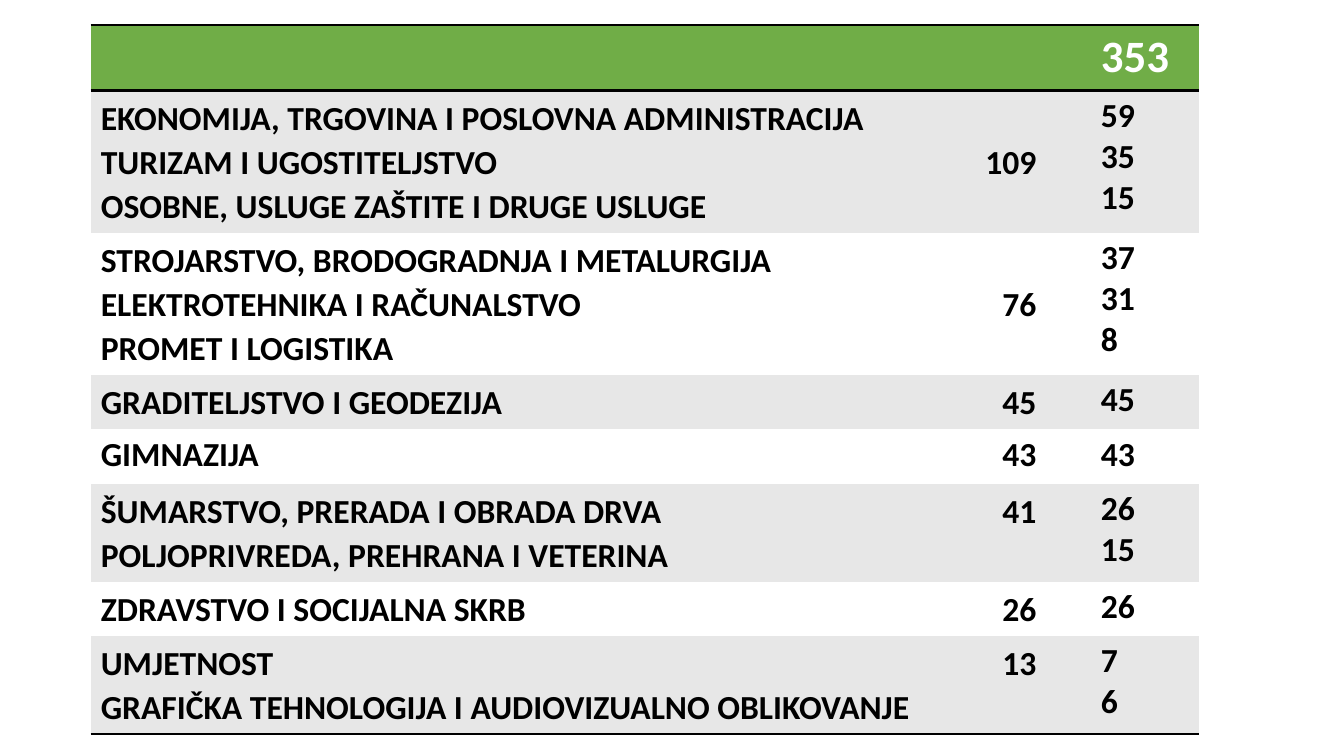
from lxml import etree
from pptx import Presentation
from pptx.dml.color import RGBColor
from pptx.oxml.ns import qn
from pptx.util import Inches, Pt

GREEN = RGBColor(0x70, 0xAD, 0x47)
GREY = RGBColor(0xE7, 0xE7, 0xE7)
WHITE = RGBColor(0xFF, 0xFF, 0xFF)
BLACK = RGBColor(0, 0, 0)
BLANK_LAYOUT = 6
FONT = "Calibri"
PLAIN_STYLE = "{2D5ABB26-0587-4C30-8999-92F81FD0307C}"
LABEL_SPACING = 1.07
SUM_TAB = Inches(9.28)
COLUMN_WIDTHS = (9.92, 1.07)
HEADER_HEIGHT = 0.65
ROW_HEIGHTS = {1: 0.54, 2: 0.97, 3: 1.41}

TOTAL = "353"
SECTORS = [
    (["EKONOMIJA, TRGOVINA I POSLOVNA ADMINISTRACIJA",
      "TURIZAM I UGOSTITELJSTVO\t109",
      "OSOBNE, USLUGE ZAŠTITE I DRUGE USLUGE"], ["59", "35", "15"]),
    (["STROJARSTVO, BRODOGRADNJA I METALURGIJA",
      "ELEKTROTEHNIKA I RAČUNALSTVO\t76",
      "PROMET I LOGISTIKA"], ["37", "31", "8"]),
    (["GRADITELJSTVO I GEODEZIJA\t45"], ["45"]),
    (["GIMNAZIJA\t43"], ["43"]),
    (["ŠUMARSTVO, PRERADA I OBRADA DRVA\t41",
      "POLJOPRIVREDA, PREHRANA I VETERINA"], ["26", "15"]),
    (["ZDRAVSTVO I SOCIJALNA SKRB\t26"], ["26"]),
    (["UMJETNOST\t13",
      "GRAFIČKA TEHNOLOGIJA I AUDIOVIZUALNO OBLIKOVANJE"], ["7", "6"]),
]


def add_sum_tab(paragraph):
    properties = paragraph._p.get_or_add_pPr()
    tabs = etree.SubElement(properties, qn("a:tabLst"))
    etree.SubElement(tabs, qn("a:tab"), pos=str(SUM_TAB), algn="r")


def fill_cell(cell, lines, background, size=24, color=BLACK, spacing=None):
    cell.fill.solid()
    cell.fill.fore_color.rgb = background
    cell.text = "\n".join(lines)
    for paragraph in cell.text_frame.paragraphs:
        if "\t" in paragraph.text:
            add_sum_tab(paragraph)
        if spacing:
            paragraph.line_spacing = spacing
        paragraph.font.name = FONT
        paragraph.font.size = Pt(size)
        paragraph.font.bold = True
        paragraph.font.color.rgb = color


def add_border(cell, side):
    properties = cell._tc.get_or_add_tcPr()
    line = etree.Element(qn(f"a:ln{side}"), w=str(Pt(2)))
    fill = etree.SubElement(line, qn("a:solidFill"))
    etree.SubElement(fill, qn("a:srgbClr"), val=str(BLACK))
    properties.insert(0, line)


def add_sector_table(slide):
    heights = [HEADER_HEIGHT] + [ROW_HEIGHTS[len(labels)] for labels, _ in SECTORS]
    frame = slide.shapes.add_table(
        len(heights), len(COLUMN_WIDTHS), Inches(0.9), Inches(0.25),
        Inches(sum(COLUMN_WIDTHS)), Inches(sum(heights)))
    table = frame.table
    table.horz_banding = False
    next(frame._element.iter(qn("a:tableStyleId"))).text = PLAIN_STYLE
    for column, width in zip(table.columns, COLUMN_WIDTHS):
        column.width = Inches(width)
    for row, height in zip(table.rows, heights):
        row.height = Inches(height)

    fill_cell(table.cell(0, 0), [], GREEN, 32, WHITE)
    fill_cell(table.cell(0, 1), [TOTAL], GREEN, 32, WHITE)
    for index, (labels, values) in enumerate(SECTORS, start=1):
        background = GREY if index % 2 else WHITE
        spacing = None if labels[0].startswith("GIMNAZIJA") else LABEL_SPACING
        fill_cell(table.cell(index, 0), labels, background, spacing=spacing)
        fill_cell(table.cell(index, 1), values, background)

    for column in range(len(COLUMN_WIDTHS)):
        add_border(table.cell(0, column), "B")
        add_border(table.cell(0, column), "T")
        add_border(table.cell(len(SECTORS), column), "B")


def main():
    presentation = Presentation()
    presentation.slide_width = Inches(13.33)
    presentation.slide_height = Inches(7.5)
    slide = presentation.slides.add_slide(presentation.slide_layouts[BLANK_LAYOUT])
    add_sector_table(slide)
    presentation.save("out.pptx")


if __name__ == "__main__":
    main()
